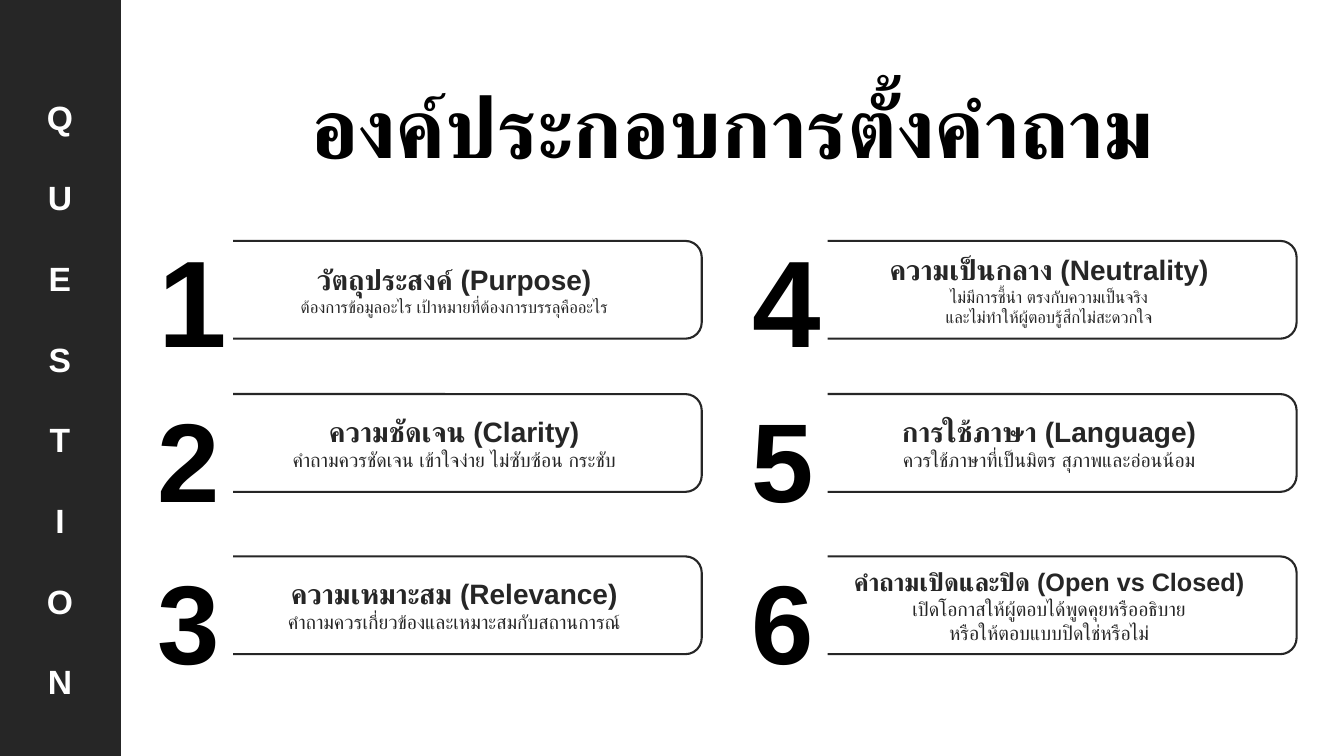
import lxml.etree
import pptx
import pptx.dml.color
import pptx.enum.shapes
import pptx.enum.text
import pptx.oxml.ns
import pptx.util

PX = 9144  # EMU in one px, 100 px to the inch
FORM = pptx.enum.shapes.MSO_SHAPE
ALIGN = pptx.enum.text.PP_ALIGN
ANCHOR = pptx.enum.text.MSO_ANCHOR
FIT = pptx.enum.text.MSO_AUTO_SIZE


def color(code):
    return pptx.dml.color.RGBColor.from_string(code)


def write(para, text, size, ink, bold=True, align=ALIGN.CENTER, space=1.0, face="Arial"):
    """Fill a paragraph; each newline becomes a line break."""
    para.alignment = align
    para.line_spacing = space
    for i, line in enumerate(text.split("\n")):
        if i:
            para.add_line_break()
        run = para.add_run()
        run.text = line
        font = run.font
        font.name, font.bold = face, bold
        font.size = pptx.util.Pt(size)
        font.color.rgb = color(ink)
        # Thai letters take the complex script font
        tag = pptx.oxml.ns.qn("a:cs")
        lxml.etree.SubElement(run._r.get_or_add_rPr(), tag).set("typeface", face)


class Deck:
    dark, black, white = "262626", "000000", "FFFFFF"

    def __init__(self, wide, high):
        self.show = pptx.Presentation()
        self.show.slide_width = wide * PX
        self.show.slide_height = high * PX
        self.slide = self.show.slides.add_slide(self.show.slide_layouts[5])

    def shape(self, home, form, *place, fill=None, line=None):
        item = home.add_shape(form, *[n * PX for n in place])
        item.shadow.inherit = False
        if fill:
            item.fill.solid()
            item.fill.fore_color.rgb = color(fill)
        else:
            item.fill.background()
        if line:
            item.line.color.rgb = color(line)
            item.line.width = pptx.util.Pt(1.5)
        else:
            item.line.fill.background()
        return item

    def frame(self, item, anchor=ANCHOR.TOP, wrap=True, fit=FIT.SHAPE_TO_FIT_TEXT):
        frame = item.text_frame
        frame.auto_size = fit
        frame.word_wrap = wrap
        frame.vertical_anchor = anchor
        return frame

    def title(self, text, *place):
        item = self.slide.shapes.title
        item.left, item.top, item.width, item.height = [n * PX for n in place]
        write(self.frame(item).paragraphs[0], text, 60, self.black)

    def bar(self, *place):
        self.shape(self.slide.shapes, FORM.RECTANGLE, *place, fill=self.dark)

    def column(self, word, *place):
        item = self.slide.shapes.add_textbox(*[n * PX for n in place])
        frame = self.frame(item, wrap=False)
        for i, letter in enumerate(word):
            para = frame.add_paragraph() if i else frame.paragraphs[0]
            write(para, letter, 24, self.white, space=2.0)

    def card(self, num, x, y, head, note, big, small, tall):
        home = self.slide.shapes.add_group_shape().shapes
        # Outlined box with heading and note
        box = self.shape(home, FORM.ROUNDED_RECTANGLE, x, y, 491, 97, line=self.dark)
        frame = self.frame(box, ANCHOR.MIDDLE, fit=FIT.NONE)
        write(frame.paragraphs[0], head, big, self.dark)
        write(frame.add_paragraph(), note, small, self.dark, bold=False)
        # Number on white, hiding the left end of the box
        place, size = ((x - 58, y - 21, 84, 158), 88) if tall else ((x - 59, y - 9, 85, 145), 80)
        tile = self.shape(home, FORM.RECTANGLE, *place, fill=self.white)
        write(self.frame(tile).paragraphs[0], str(num), size, self.black, align=ALIGN.LEFT)


# Heading, note, heading size, note size
CARDS = [
    ("วัตถุประสงค์ (Purpose)", "ต้องการข้อมูลอะไร เป้าหมายที่ต้องการบรรลุคืออะไร", 20, 12),
    ("ความชัดเจน (Clarity)", "คำถามควรชัดเจน เข้าใจง่าย ไม่ซับซ้อน กระชับ", 20, 14),
    ("ความเหมาะสม (Relevance)", "คำถามควรเกี่ยวข้องและเหมาะสมกับสถานการณ์", 20, 14),
    ("ความเป็นกลาง (Neutrality)",
     "ไม่มีการชี้นำ ตรงกับความเป็นจริง\nและไม่ทำให้ผู้ตอบรู้สึกไม่สะดวกใจ", 20, 12),
    ("การใช้ภาษา (Language)", "ควรใช้ภาษาที่เป็นมิตร สุภาพและอ่อนน้อม", 20, 14),
    ("คำถามเปิดและปิด (Open vs Closed)",
     "เปิดโอกาสให้ผู้ตอบได้พูดคุยหรืออธิบาย\nหรือให้ตอบแบบปิดใช่หรือไม่", 18, 14),
]
ROWS = [239, 391, 552]


def main():
    deck = Deck(1333, 750)

    # Side bar and title
    deck.bar(0, 0, 120, 750)
    deck.column("QUESTION", 36, 51, 47, 646)
    deck.title("องค์ประกอบการตั้งคำถาม", 120, 69, 1213, 111)

    # Two columns of three cards
    for i, (head, note, big, small) in enumerate(CARDS):
        col, row = divmod(i, len(ROWS))
        deck.card(i + 1, 205 + 590 * col, ROWS[row], head, note, big, small, tall=row == 0)

    deck.show.save("out.pptx")


if __name__ == "__main__":
    main()
